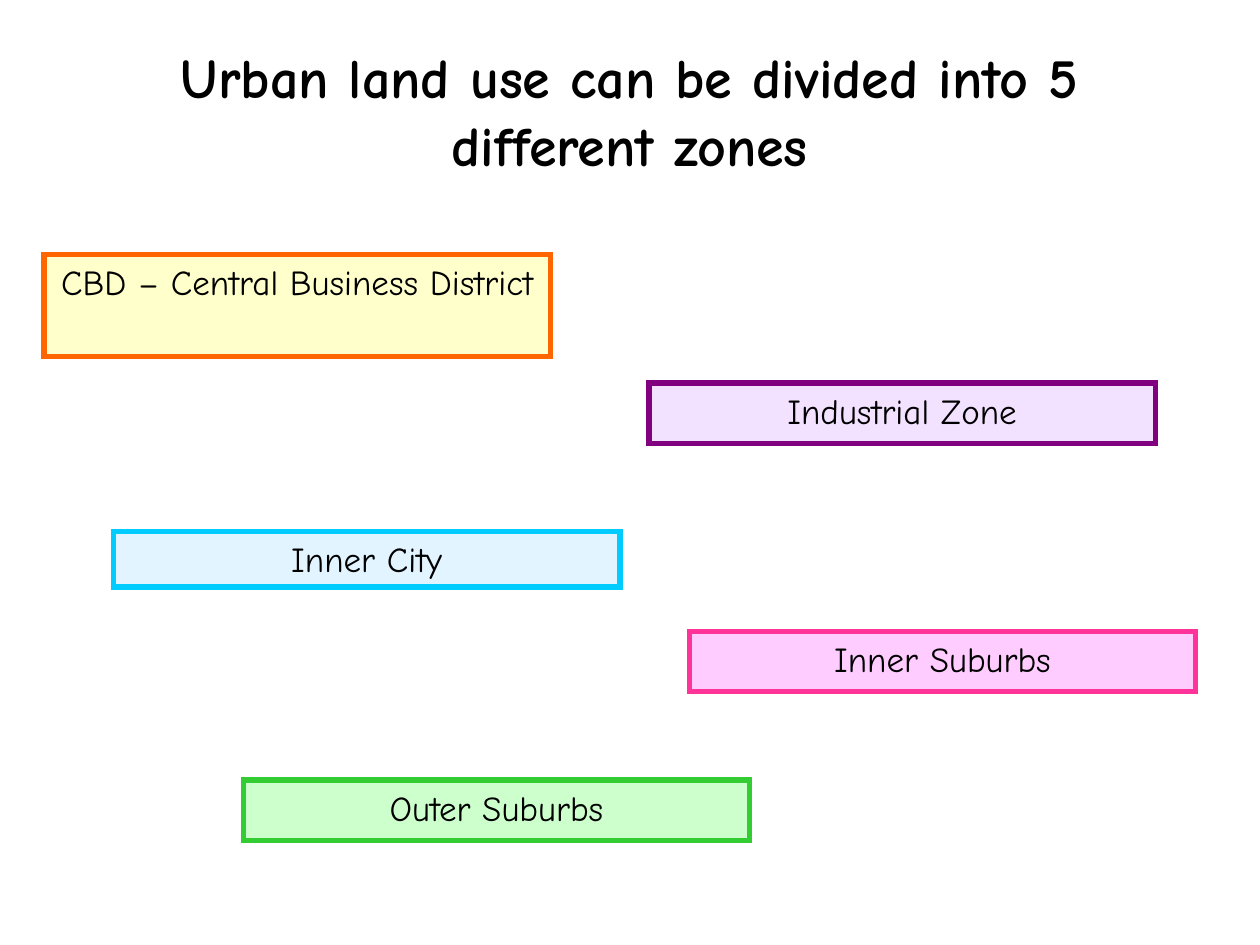
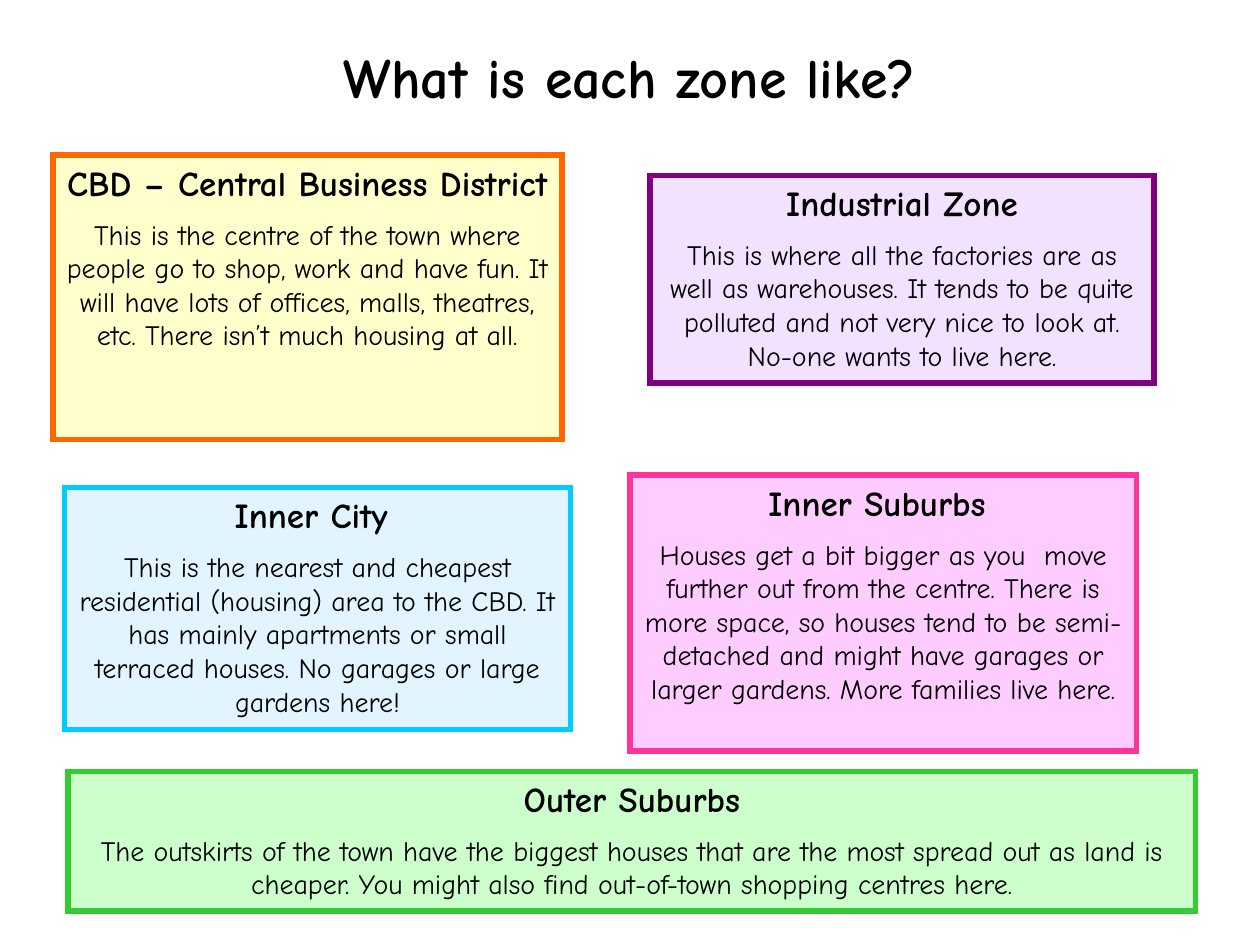
from dataclasses import dataclass

from lxml.etree import SubElement
from pptx import Presentation
from pptx.dml.color import RGBColor
from pptx.enum.shapes import MSO_SHAPE
from pptx.enum.text import MSO_ANCHOR, MSO_AUTO_SIZE, PP_ALIGN
from pptx.oxml.ns import qn
from pptx.util import Inches, Pt


@dataclass(frozen=True)
class Theme:
    font: str = "Comic Neue"
    text: str = "000000"
    title_size: int = 32
    heading_size: int = 20
    body_size: int = 16
    border: int = 3
    body_gap: int = 8
    side_inset: float = 0.1
    top_inset: float = 0.05


THEME = Theme()
TITLE_LEFT, TITLE_TOP, TITLE_WIDTH = 0.51, 0.29, 8.98
ZONE_WIDTH = 4.02

# Zone name: (fill, border)
ZONE_COLOURS = {
    "CBD – Central Business District": ("FFFFCC", "FF6600"),
    "Industrial Zone": ("F2E1FF", "800080"),
    "Inner City": ("E1F4FF", "00CCFF"),
    "Inner Suburbs": ("FFCCFF", "FF3399"),
    "Outer Suburbs": ("CCFFCC", "33CC33"),
}
CBD, INDUSTRIAL, INNER_CITY, INNER_SUBURBS, OUTER_SUBURBS = ZONE_COLOURS

# Each zone: heading, (left, top, width, height), description
SLIDES = [
    {
        "title": "Urban land use can be divided into 5 different zones",
        "title_height": 1.17,
        "zones": [
            (CBD, (0.35, 2.02, ZONE_WIDTH, 0.81), None),
            (INDUSTRIAL, (5.15, 3.04, ZONE_WIDTH, 0.48), None),
            (INNER_CITY, (0.9, 4.22, ZONE_WIDTH, 0.44), None),
            (INNER_SUBURBS, (5.47, 5.01, ZONE_WIDTH, 0.48), None),
            (OUTER_SUBURBS, (1.93, 6.19, ZONE_WIDTH, 0.48), None),
        ],
    },
    {
        "title": "What is each zone like?",
        "title_height": 0.64,
        "zones": [
            (CBD, (0.42, 1.23, 4.04, 2.26),
             "This is the centre of the town where people go to shop, work and "
             "have fun. It will have lots of offices, malls, theatres, etc. "
             "There isn’t much housing at all."),
            (INDUSTRIAL, (5.16, 1.39, 4, 1.65),
             "This is where all the factories are as well as warehouses. It "
             "tends to be quite polluted and not very nice to look at. "
             "No-one wants to live here."),
            (INNER_CITY + " ", (0.51, 3.87, ZONE_WIDTH, 1.92),
             "This is the nearest and cheapest residential (housing) area to "
             "the CBD. It has mainly apartments or small terraced houses. "
             "No garages or large gardens here!"),
            (INNER_SUBURBS + " ", (5, 3.77, ZONE_WIDTH, 2.19),
             "Houses get a bit bigger as you  move further out from the "
             "centre. There is more space, so houses tend to be semi-detached "
             "and might have garages or larger gardens. More families live "
             "here."),
            (OUTER_SUBURBS, (0.54, 6.12, 8.95, 1.11),
             "The outskirts of the town have the biggest houses that are the "
             "most spread out as land is cheaper. You might also find "
             "out-of-town shopping centres here."),
        ],
    },
]


def write_text(paragraph, text, *, size, bold=False, space_before=0):
    paragraph.alignment = PP_ALIGN.CENTER
    paragraph.space_before = Pt(space_before)
    run = paragraph.add_run()
    run.text = text
    run.font.name = THEME.font
    run.font.size = Pt(size)
    run.font.bold = bold
    run.font.color.rgb = RGBColor.from_string(THEME.text)


def prepare_frame(shape):
    """Wrap text from the top of the shape with the shared insets."""
    frame = shape.text_frame
    frame.word_wrap = True
    frame.auto_size = MSO_AUTO_SIZE.NONE
    frame.vertical_anchor = MSO_ANCHOR.TOP
    frame.margin_left = frame.margin_right = Inches(THEME.side_inset)
    frame.margin_top = frame.margin_bottom = Inches(THEME.top_inset)
    return frame


def set_title(slide, text, height):
    title = slide.shapes.title
    title.left, title.top = Inches(TITLE_LEFT), Inches(TITLE_TOP)
    title.width, title.height = Inches(TITLE_WIDTH), Inches(height)
    frame = prepare_frame(title)
    write_text(frame.paragraphs[0], text, size=THEME.title_size, bold=True)


def set_border(shape, colour):
    """Draw a border with square corners."""
    shape.line.color.rgb = RGBColor.from_string(colour)
    shape.line.width = Pt(THEME.border)
    line = shape.element.spPr.find(qn("a:ln"))
    SubElement(line, qn("a:miter"), lim="800000")


def add_zone(slide, heading, box, description):
    fill, border = ZONE_COLOURS[heading.strip()]
    shape = slide.shapes.add_shape(MSO_SHAPE.RECTANGLE, *map(Inches, box))
    shape.shadow.inherit = False
    shape.fill.solid()
    shape.fill.fore_color.rgb = RGBColor.from_string(fill)
    set_border(shape, border)
    frame = prepare_frame(shape)
    write_text(frame.paragraphs[0], heading, size=THEME.heading_size,
               bold=description is not None)
    if description:
        write_text(frame.add_paragraph(), description, size=THEME.body_size,
                   space_before=THEME.body_gap)


def main():
    presentation = Presentation()
    presentation.slide_width, presentation.slide_height = Inches(10), Inches(7.5)
    title_only = presentation.slide_layouts.get_by_name("Title Only")
    for content in SLIDES:
        slide = presentation.slides.add_slide(title_only)
        set_title(slide, content["title"], content["title_height"])
        for heading, box, description in content["zones"]:
            add_zone(slide, heading, box, description)
    presentation.save("out.pptx")


if __name__ == "__main__":
    main()
